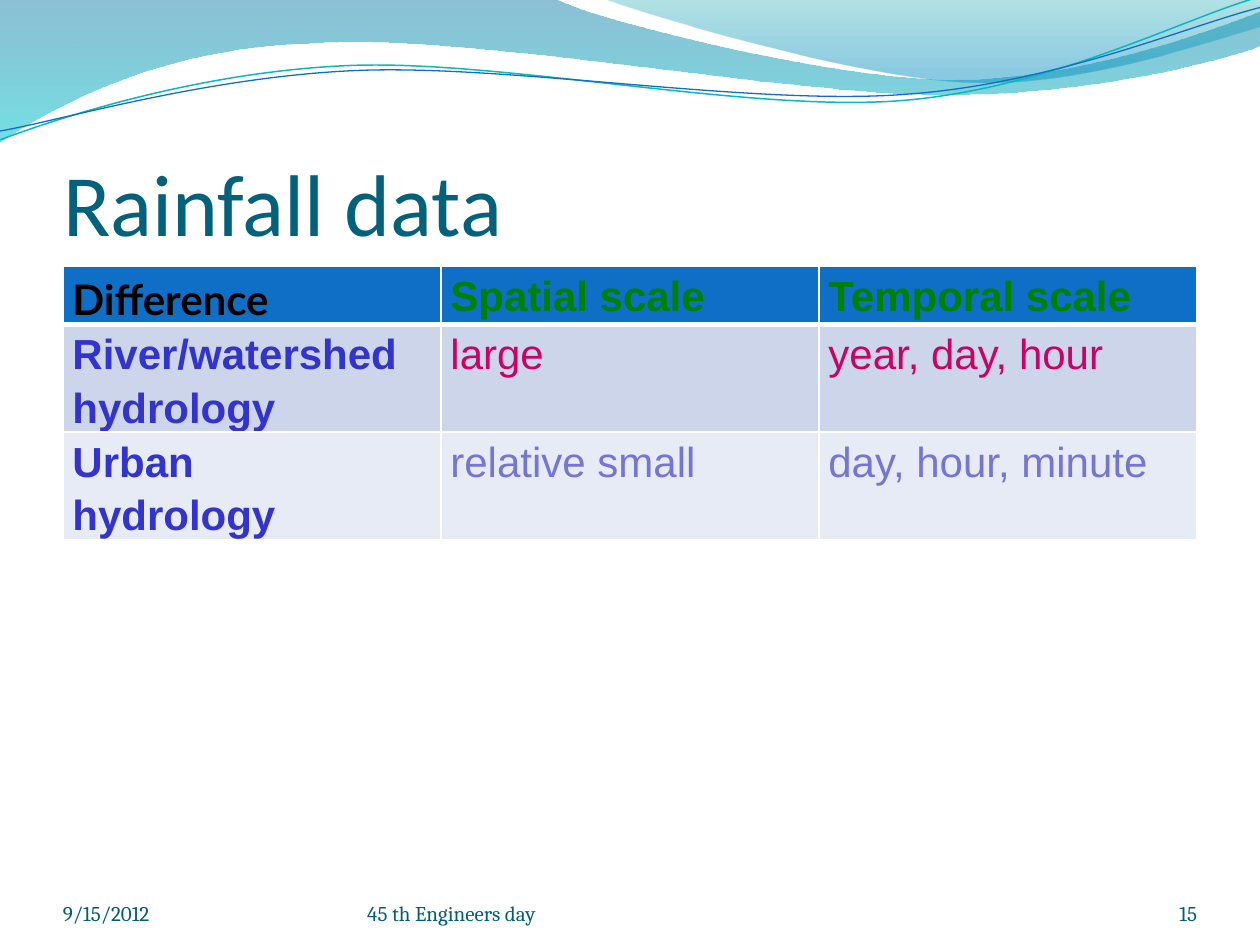
"""Build the rainfall data slide: wave banner, title, comparison table and footer."""
import math

import pptx
import pptx.dml.color
import pptx.enum.text
import pptx.oxml
import pptx.oxml.ns
import pptx.util

Inches, Pt = pptx.util.Inches, pptx.util.Pt
ANCHOR, ALIGN = pptx.enum.text.MSO_ANCHOR, pptx.enum.text.PP_ALIGN
qn = pptx.oxml.ns.qn
NAMESPACE = pptx.oxml.ns.nsdecls("a")


def tint(target, hex_color):
    target.rgb = pptx.dml.color.RGBColor.from_string(hex_color)


def write(paragraph, wording, hex_color, **formats):
    run = paragraph.add_run()
    run.text = wording
    for name, value in formats.items():
        setattr(run.font, name, value)
    tint(run.font.color, hex_color)


deck = pptx.Presentation()
deck.slide_width, deck.slide_height = Inches(10), Inches(7.5)
column, row = deck.slide_width / 20, deck.slide_height / 20
slide = deck.slides.add_slide(deck.slide_layouts[5])

waves = [
    {"start": (0, 0), "stops": [("0074A1", 45, 0), ("00C6CF", 55, 1)],
     "segments": [(4.4, -0.01), (4.76, 0.17, 6.64, 0.63, 7.58, 0.63),
                  (8.53, 0.63, 9.58, 0.26, 10, 0.09), (10.01, 0.36),
                  (9.83, 0.44, 8.7, 0.76, 7.46, 0.75),
                  (6.22, 0.75, 3.82, 0.28, 2.57, 0.34),
                  (1.29, 0.36, 0.46, 0.83, -0.01, 1.13), (0, 0)]},
    {"start": (4.79, -0.01), "stops": [("00A1A9", 30, 0), ("008BBF", 45, 0.8)],
     "segments": [(5.09, 0.11, 6.82, 0.62, 7.69, 0.65),
                  (8.56, 0.69, 9.61, 0.32, 10, 0.21), (10, 0), (4.79, -0.01)]},
    {"start": (0, 1.11), "line": ("0AB8BF", 0.85), "tilt": -2.7, "center": (4.99, 0.58),
     "segments": [(0.48, 0.93, 1.58, 0.57, 2.77, 0.52),
                  (3.95, 0.47, 5.93, 0.89, 7.13, 0.8),
                  (8.33, 0.71, 9.38, 0.15, 9.98, -0.02)]},
    {"start": (0, 1.04), "line": ("0F6FC6", 0.75), "tilt": -2.7, "center": (5, 0.59),
     "segments": [(0.47, 0.96, 1.64, 0.61, 2.83, 0.56),
                  (4.03, 0.51, 5.97, 0.84, 7.17, 0.75),
                  (8.36, 0.67, 9.41, 0.21, 10, 0.06)]},
]
for wave in waves:
    tilt = wave.get("tilt", 0)
    center_x, center_y = wave.get("center", (0, 0))
    cos, sin = math.cos(math.radians(-tilt)), math.sin(math.radians(-tilt))
    points = [wave["start"]]
    for segment in wave["segments"]:
        points += zip(segment[::2], segment[1::2])
    outline = [(Inches(center_x + (x - center_x) * cos - (y - center_y) * sin),
                Inches(center_y + (x - center_x) * sin + (y - center_y) * cos))
               for x, y in points]
    builder = slide.shapes.build_freeform(*outline[0])
    builder.add_line_segments(outline[1:], close="stops" in wave)
    ribbon = builder.convert_to_shape()
    legs = iter(list(ribbon.element.iter(qn("a:lnTo"))))
    for segment in wave["segments"]:
        group = [next(legs) for _ in segment[::2]]
        if len(group) == 3:
            curve = pptx.oxml.parse_xml(f"<a:cubicBezTo {NAMESPACE}/>")
            group[0].addprevious(curve)
            for leg in group:
                curve.append(leg[0])
                leg.getparent().remove(leg)
    ribbon.rotation = tilt
    ribbon.shadow.inherit = False
    if "stops" in wave:
        ribbon.line.fill.background()
        ribbon.fill.gradient()
        ribbon.fill.gradient_angle = 270
        for stop, (hex_color, _, position) in zip(ribbon.fill.gradient_stops, wave["stops"]):
            tint(stop.color, hex_color)
            stop.position = position
        for shade, (_, opacity, _) in zip(ribbon.element.iter(qn("a:srgbClr")), wave["stops"]):
            shade.append(pptx.oxml.parse_xml(f'<a:alpha {NAMESPACE} val="{opacity * 1000}"/>'))
    else:
        hex_color, weight = wave["line"]
        ribbon.fill.background()
        tint(ribbon.line.color, hex_color)
        ribbon.line.width = Pt(weight)

heading = slide.shapes.title
for name, value in {"left": column, "top": Inches(0.77), "width": 18 * column,
                    "height": Inches(1.25)}.items():
    setattr(heading, name, int(value))
for name, value in {"margin_left": 0, "margin_right": 0, "margin_top": Inches(0.05),
                    "margin_bottom": 0, "vertical_anchor": ANCHOR.BOTTOM,
                    "word_wrap": True}.items():
    setattr(heading.text_frame, name, value)
heading.text_frame.paragraphs[0].alignment = ALIGN.LEFT
write(heading.text_frame.paragraphs[0], "Rainfall data", "04617B", name="Calibri", size=Pt(50))

comparison = [
    ("0F6FC6", [("Difference", "000000"), ("Spatial scale", "008100"),
                ("Temporal scale", "008100")]),
    ("CCD5EA", [("River/watershed\nhydrology", "3333CD"), ("large", "CD0065"),
                ("year, day, hour", "CD0065")]),
    ("E7EBF5", [("Urban\nhydrology", "3333CD"), ("relative small", "7575D2"),
                ("day, hour, minute", "7575D2")]),
]
scales = slide.shapes.add_table(3, 3, int(column), int(5.64 * row), int(18 * column),
                                Inches(3 * 0.41))
scales.height = Inches(2.3)
for r, (band, entries) in enumerate(comparison):
    for c, (wording, hex_color) in enumerate(entries):
        cell = scales.table.cell(r, c)
        for name, value in {"margin_left": Pt(5.4), "margin_right": Pt(5.4),
                            "margin_top": 0, "margin_bottom": 0,
                            "vertical_anchor": ANCHOR.TOP}.items():
            setattr(cell, name, value)
        cell.fill.solid()
        tint(cell.fill.fore_color, band)
        for i, text in enumerate(wording.split("\n")):
            frame = cell.text_frame
            paragraph = frame.add_paragraph() if i else frame.paragraphs[0]
            paragraph.line_spacing = 1.15
            write(paragraph, text, hex_color, size=Pt(24), bold=r == 0 or c == 0,
                  name="Lato" if r == c == 0 else "Arial")
        for i, side in enumerate("LRTB"):
            weight = 3 if (r, side) in ((0, "B"), (1, "T")) else 1
            cell._tc.tcPr.insert(i, pptx.oxml.parse_xml(
                f'<a:ln{side} {NAMESPACE} w="{Pt(weight)}"><a:solidFill>'
                f'<a:srgbClr val="FFFFFF"/></a:solidFill></a:ln{side}>'))

for wording, left, width, alignment in [
        ("9/15/2012", 1, 4.66, ALIGN.LEFT),
        ("15", 17.34, 1.66, ALIGN.RIGHT),
        ("45 th Engineers day", 5.83, 7.34, ALIGN.LEFT)]:
    frame = slide.shapes.add_textbox(int(left * column), int(18.53 * row),
                                     int(width * column), Inches(0.4)).text_frame
    for name, value in {"margin_left": 0, "margin_right": 0, "margin_top": 0,
                        "margin_bottom": 0, "vertical_anchor": ANCHOR.BOTTOM,
                        "word_wrap": True}.items():
        setattr(frame, name, value)
    frame.paragraphs[0].alignment = alignment
    write(frame.paragraphs[0], wording, "045D75", name="Cambria", size=Pt(12))

deck.save("out.pptx")
